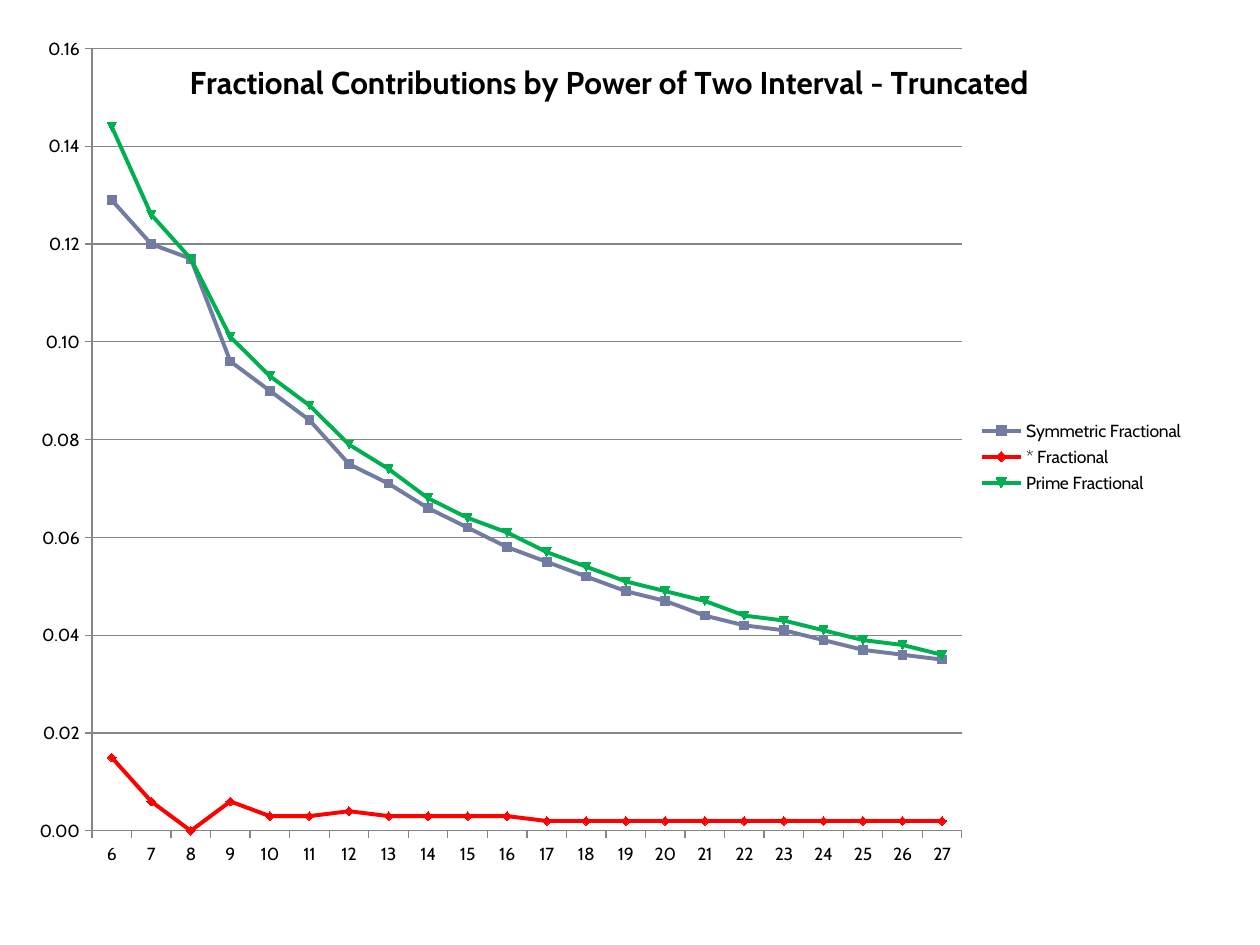
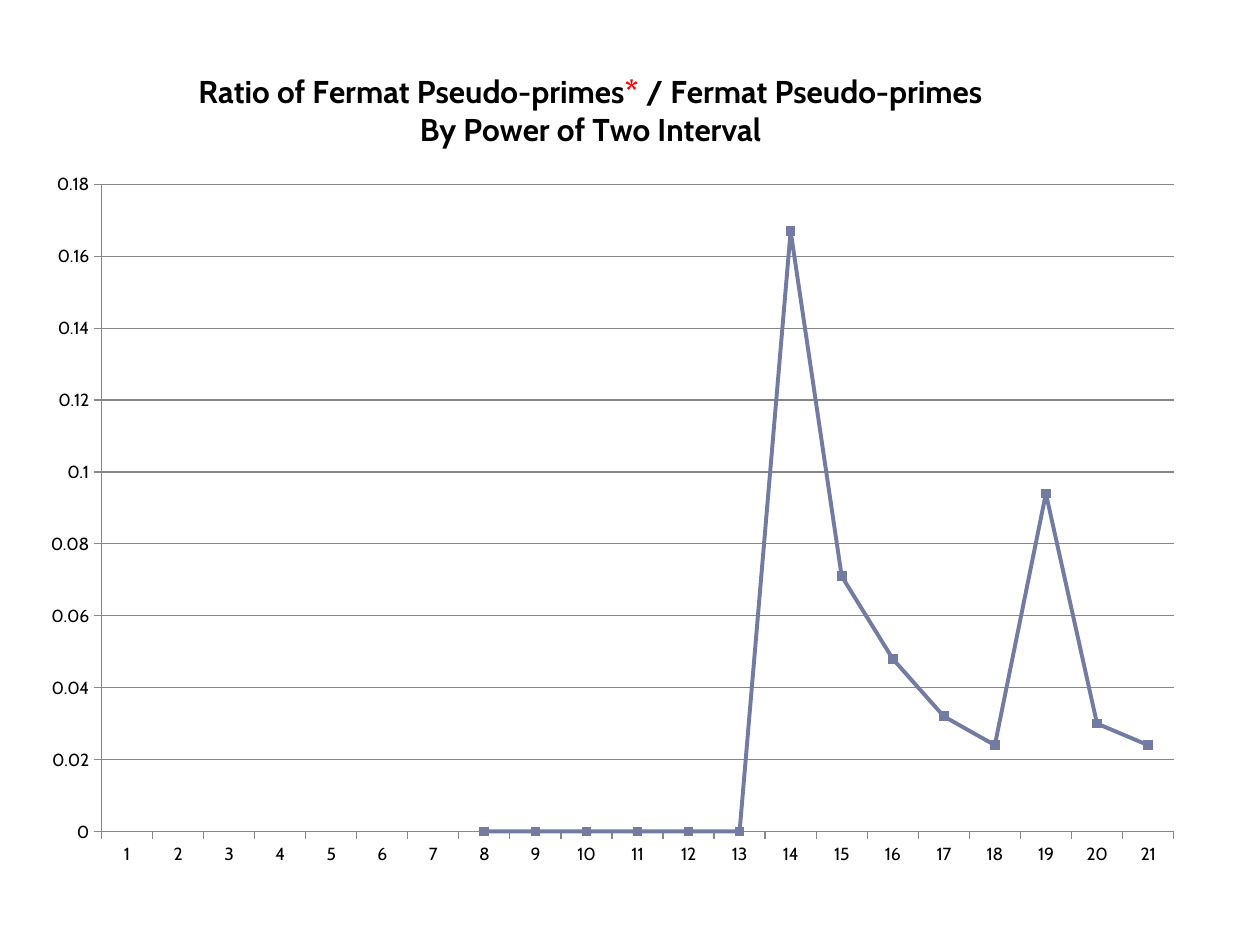
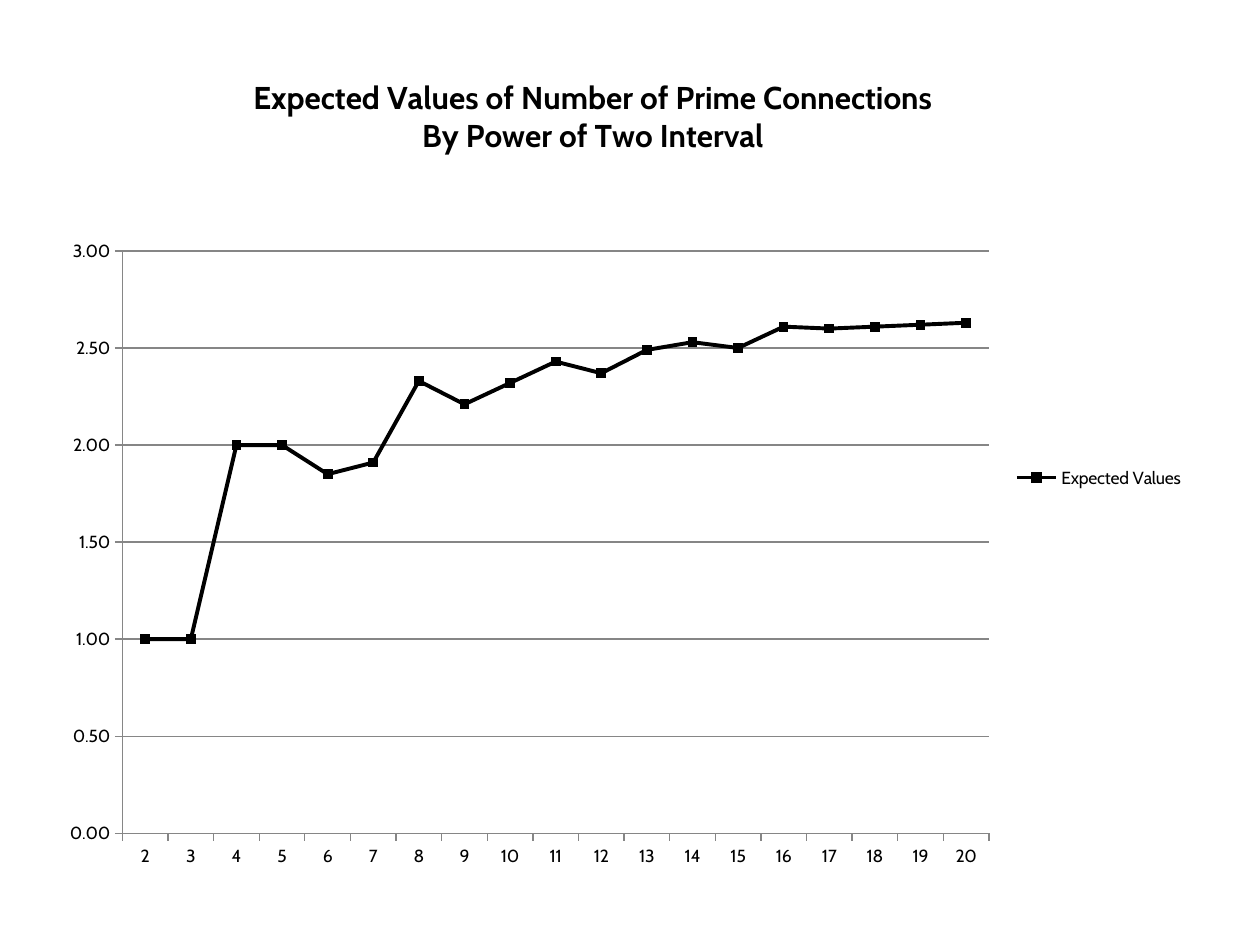
"""Build three line-chart slides on prime and pseudo-prime intervals."""
from pptx import Presentation
from pptx.chart.data import CategoryChartData
from pptx.dml.color import RGBColor
from pptx.enum.chart import XL_CHART_TYPE as ChartType, XL_LEGEND_POSITION as LegendSide
from pptx.enum.chart import XL_TICK_MARK as Tick
from pptx.oxml import parse_xml
from pptx.oxml.ns import nsdecls
from pptx.util import Inches, Pt

FONT = "Cabin"
INK, SLATE, RED, GREEN, GRID = "000000", "727CA3", "FF0000", "00B050", "868686"


def rgb(hex_string):
    return RGBColor.from_string(hex_string)


def place(parent, index, **shares):
    for old in parent.xpath("c:layout"):
        parent.remove(old)
    target = '<c:layoutTarget val="inner"/>' if "w" in shares else ""
    modes = "".join(f'<c:{side}Mode val="edge"/>' for side in "xy")
    sizes = "".join(f'<c:{side} val="{share}"/>' for side, share in shares.items())
    parent.insert(index, parse_xml(
        f'<c:layout {nsdecls("c")}><c:manualLayout>{target}{modes}{sizes}'
        "</c:manualLayout></c:layout>"))


pages = [
    dict(
        frame=(0.17, 0.25, 9.33, 6.75),
        title=[[("Fractional Contributions by Power of Two Interval - Truncated", INK)]],
        title_at=None,
        plot=dict(x=0.06, y=0.02, w=0.74, h=0.92),
        powers=range(6, 28), top=0.16, step=0.02, number_format="0.00", legend=True,
        series=[
            ("Symmetric Fractional", SLATE,
             [0.129, 0.12, 0.117, 0.096, 0.09, 0.084, 0.075, 0.071, 0.066, 0.062, 0.058,
              0.055, 0.052, 0.049, 0.047, 0.044, 0.042, 0.041, 0.039, 0.037, 0.036, 0.035]),
            ("* Fractional", RED,
             [0.015, 0.006, 0, 0.006, 0.003, 0.003, 0.004] + [0.003] * 4 + [0.002] * 11),
            ("Prime Fractional", GREEN,
             [0.144, 0.126, 0.117, 0.101, 0.093, 0.087, 0.079, 0.074, 0.068, 0.064, 0.061,
              0.057, 0.054, 0.051, 0.049, 0.047, 0.044, 0.043, 0.041, 0.039, 0.038, 0.036]),
        ],
    ),
    dict(
        frame=(0.25, 0.33, 9.25, 6.67),
        title=[[("Ratio of Fermat Pseudo-primes", INK), ("*", RED),
                (" / Fermat Pseudo-primes", INK)],
               [("By Power of Two Interval", INK)]],
        title_at=dict(x=0.14, y=0.03),
        plot=dict(x=0.06, y=0.17, w=0.92, h=0.77),
        powers=range(1, 22), top=0.18, step=0.02, number_format="General", legend=False,
        series=[
            ("Series 1", SLATE,
             [None] * 7 + [0] * 6 + [0.167, 0.071, 0.048, 0.032, 0.024, 0.094, 0.03, 0.024]),
        ],
    ),
    dict(
        frame=(0.33, 0.58, 9.17, 6.42),
        title=[[("Expected Values of Number of Prime Connections", INK)],
               [("By Power of Two Interval", INK)]],
        title_at=dict(x=0.18, y=0),
        plot=dict(x=0.07, y=0.22, w=0.75, h=0.72),
        powers=range(2, 21), top=3, step=0.5, number_format="0.00", legend=True,
        series=[
            ("Expected Values", INK,
             [1, 1, 2, 2, 1.85, 1.91, 2.33, 2.21, 2.32, 2.43, 2.37, 2.49, 2.53, 2.5,
              2.61, 2.6, 2.61, 2.62, 2.63]),
        ],
    ),
]

deck = Presentation()
deck.slide_width, deck.slide_height = Inches(10), Inches(7.5)

for page in pages:
    slide = deck.slides.add_slide(deck.slide_layouts[6])
    figures = CategoryChartData()
    figures.categories = [str(power) for power in page["powers"]]
    for name, _, values in page["series"]:
        figures.add_series(name, values)
    chart = slide.shapes.add_chart(
        ChartType.LINE_MARKERS, *map(Inches, page["frame"]), figures).chart
    chart.font.name, chart.font.size = FONT, Pt(10)
    chart.font.color.rgb = rgb(INK)

    heading = chart.chart_title.text_frame
    for number, pieces in enumerate(page["title"]):
        line = heading.add_paragraph() if number else heading.paragraphs[0]
        line.font.name, line.font.size, line.font.bold = FONT, Pt(18), True
        for words, color in pieces:
            run = line.add_run()
            run.text = words
            run.font.color.rgb = rgb(color)
    if page["title_at"]:
        place(chart.element.xpath("c:chart/c:title")[0], 1, **page["title_at"])
    place(chart.element.xpath("c:chart/c:plotArea")[0], 0, **page["plot"])

    chart.has_legend = page["legend"]
    if page["legend"]:
        chart.legend.position = LegendSide.RIGHT
        chart.legend.include_in_layout = False

    scale = chart.value_axis
    scale.minimum_scale, scale.maximum_scale = 0, page["top"]
    scale.major_unit = page["step"]
    scale.tick_labels.number_format = page["number_format"]
    scale.tick_labels.number_format_is_linked = False
    scale.has_major_gridlines = True
    for axis in (scale, chart.category_axis):
        axis.major_tick_mark, axis.minor_tick_mark = Tick.OUTSIDE, Tick.NONE
    for rule in (scale.major_gridlines, scale, chart.category_axis):
        rule.format.line.color.rgb = rgb(GRID)
        rule.format.line.width = Pt(0.75)

    chart.plots[0].vary_by_categories = False
    for curve, (_, color, _) in zip(chart.plots[0].series, page["series"]):
        curve.smooth = False
        curve.format.line.color.rgb = rgb(color)
        curve.format.line.width = Pt(2.25)
        curve.marker.size = 5
        curve.marker.format.fill.solid()
        curve.marker.format.fill.fore_color.rgb = rgb(color)
        curve.marker.format.line.color.rgb = rgb(color)

deck.save("out.pptx")
